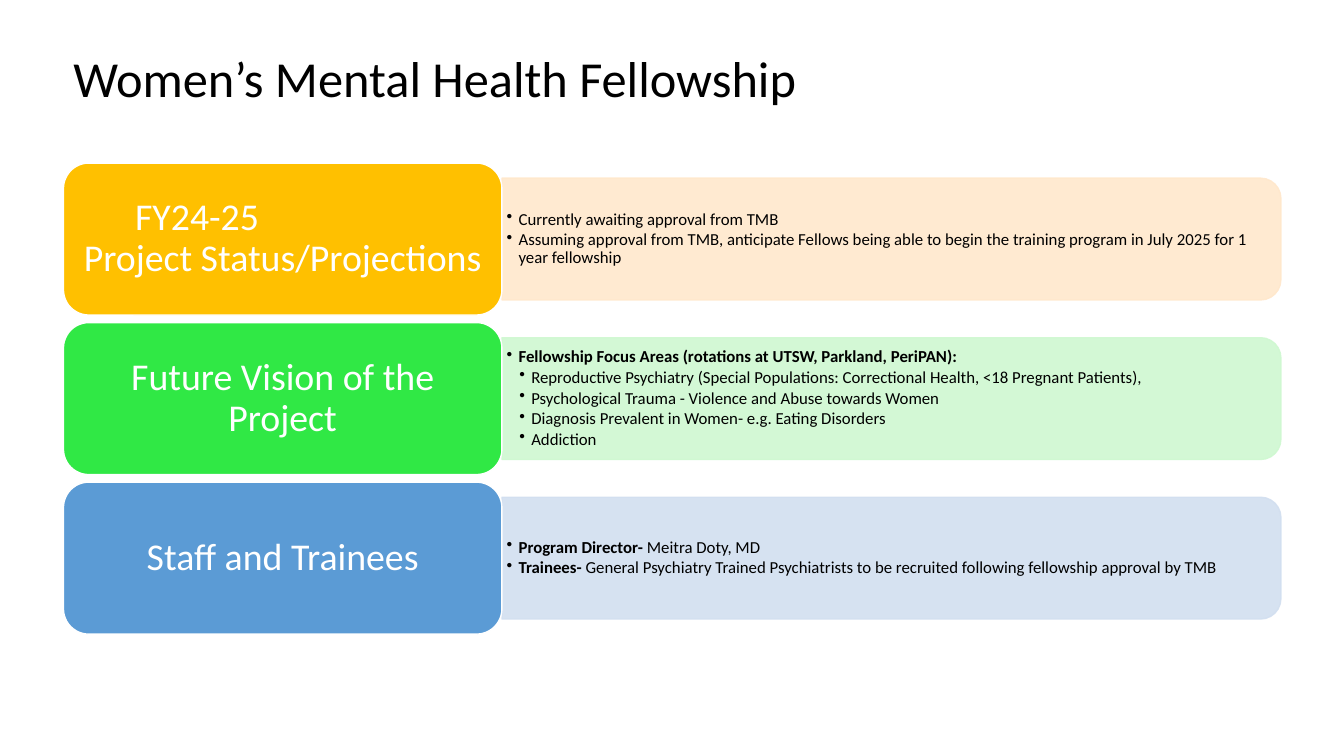
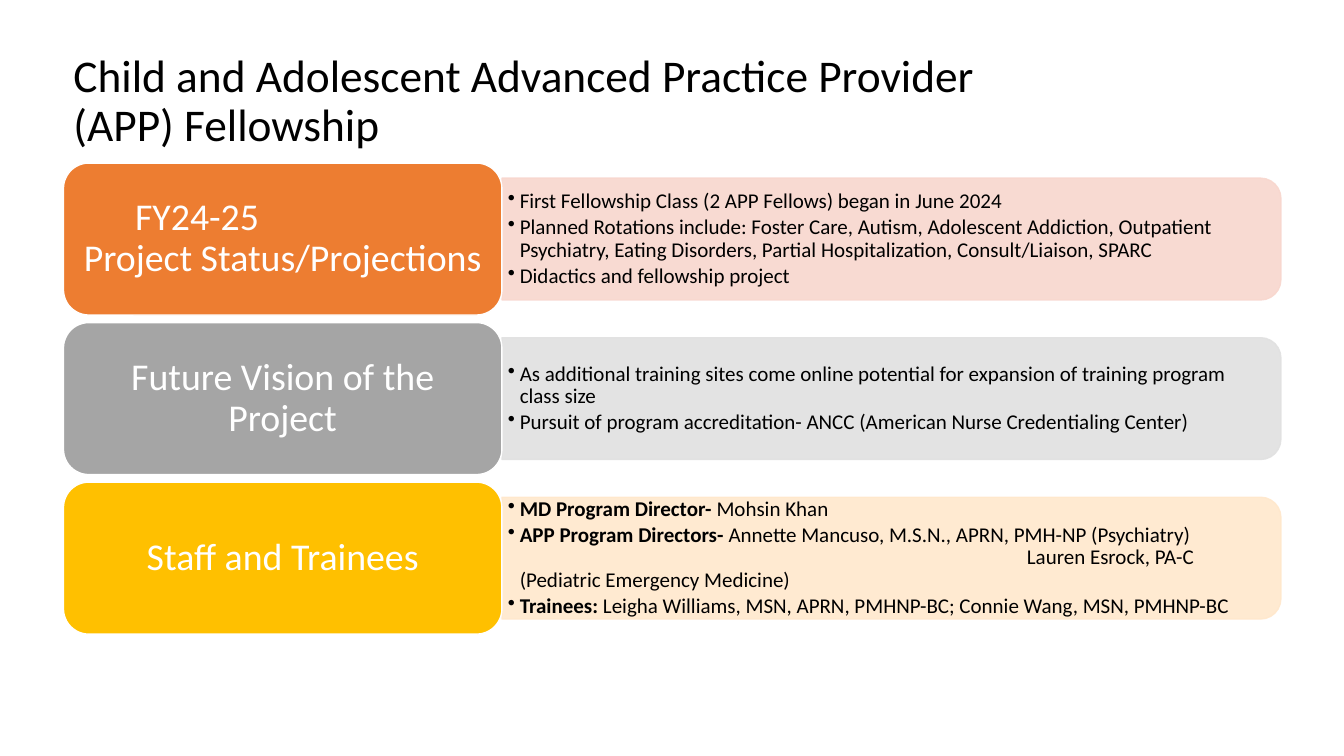
import pptx
import pptx.util
import pptx.dml.color
import pptx.enum.shapes
import pptx.enum.text
import pptx.oxml
import pptx.oxml.ns
from pptx.util import Cm

STATUS = ["FY24-25", "Project Status/Projections"]
VISION = ["Future Vision of the Project"]
STAFF = ["Staff and Trainees"]

# Each bullet: kind, bold part, plain part
SLIDES = [
    {
        "title": ["Women’s Mental Health Fellowship"], "title_size": 36, "size": 12,
        "rows": [
            (STATUS, "FFC000", "FFE8CC", [
                ("main", "", "Currently awaiting approval from TMB"),
                ("main", "", "Assuming approval from TMB, anticipate Fellows being able to begin "
                             "the training program in July 2025 for 1 year fellowship"),
            ]),
            (VISION, "30E845", "CFF8D1", [
                ("main", "Fellowship Focus Areas (rotations at UTSW, Parkland, PeriPAN):", ""),
                ("sub", "", "Reproductive Psychiatry (Special Populations: Correctional Health, "
                            "<18 Pregnant Patients),"),
                ("sub", "", "Psychological Trauma - Violence and Abuse towards Women"),
                ("sub", "", "Diagnosis Prevalent in Women- e.g. Eating Disorders"),
                ("sub", "", "Addiction"),
            ]),
            (STAFF, "5B9BD5", "D2DFF0", [
                ("main", "Program Director- ", "Meitra Doty, MD"),
                ("main", "Trainees-", " General Psychiatry Trained Psychiatrists to be recruited "
                                      "following fellowship approval by TMB"),
            ]),
        ],
    },
    {
        "title": ["Child and Adolescent Advanced Practice Provider", "(APP) Fellowship"],
        "title_size": 32.4, "size": 15,
        "rows": [
            (STATUS, "ED7D31", "F8D7CE", [
                ("main", "", "First Fellowship Class (2 APP Fellows) began in June 2024"),
                ("main", "", "Planned Rotations include: Foster Care, Autism, Adolescent "
                             "Addiction, Outpatient Psychiatry, Eating Disorders, Partial "
                             "Hospitalization, Consult/Liaison, SPARC"),
                ("main", "", "Didactics and fellowship project"),
            ]),
            (VISION, "A5A5A5", "E1E1E1", [
                ("main", "", "As additional training sites come online potential for expansion "
                             "of training program class size"),
                ("main", "", "Pursuit of program accreditation- ANCC (American Nurse "
                             "Credentialing Center)"),
            ]),
            (STAFF, "FFC000", "FFE8CC", [
                ("main", "MD Program Director- ", "Mohsin Khan"),
                ("main", "APP Program Directors- ",
                 "Annette Mancuso, M.S.N., APRN, PMH-NP (Psychiatry)"),
                ("continued", "", "Lauren Esrock, PA-C (Pediatric Emergency Medicine)"),
                ("main", "Trainees: ",
                 "Leigha Williams, MSN, APRN, PMHNP-BC; Connie Wang, MSN, PMHNP-BC"),
            ]),
        ],
    },
]

# Shared layout and style
FONT, BLACK, WHITE = "Calibri", "000000", "FFFFFF"
LEFT, TOP, PITCH = Cm(1.6), Cm(4.11), Cm(4.02)
LABEL_WIDTH, LABEL_HEIGHT = Cm(11.05), Cm(3.83)
PANEL_LEFT, PANEL_WIDTH, PANEL_HEIGHT = LEFT + LABEL_WIDTH, Cm(19.63), Cm(3.07)
TEXT_WIDTH, TEXT_HEIGHT = Cm(19.48), Cm(2.77)
LABEL_SIZE, STATUS_INDENT = 27, Cm(1.37)
# Left margin and first-line indent of each kind of bullet
INDENTS = {"main": (Cm(0.3), Cm(-0.3)), "sub": (Cm(0.62), Cm(-0.3)),
           "continued": (Cm(0.3), Cm(12.78))}
ALIGN = pptx.enum.text.PP_ALIGN
ANCHOR = pptx.enum.text.MSO_ANCHOR
SHAPE = pptx.enum.shapes.MSO_SHAPE


def rgb(color):
    return pptx.dml.color.RGBColor.from_string(color)


def add_text(paragraph, text, size=12, color=BLACK, bold=False):
    run = paragraph.add_run()
    run.text = text
    run.font.name, run.font.size = FONT, pptx.util.Pt(size)
    run.font.bold, run.font.color.rgb = bold, rgb(color)


def set_frame(frame, horizontal, vertical, anchor=ANCHOR.MIDDLE):
    frame.word_wrap = True
    frame.auto_size = pptx.enum.text.MSO_AUTO_SIZE.NONE
    frame.vertical_anchor = anchor
    frame.margin_left = frame.margin_right = horizontal
    frame.margin_top = frame.margin_bottom = vertical


def next_paragraph(frame, index, align=ALIGN.LEFT):
    paragraph = frame.add_paragraph() if index else frame.paragraphs[0]
    paragraph.alignment, paragraph.line_spacing = align, 0.9
    paragraph.space_before = paragraph.space_after = pptx.util.Pt(0)
    return paragraph


def set_indent(paragraph, margin, indent):
    properties = paragraph._p.get_or_add_pPr()
    properties.set("marL", str(margin))
    properties.set("indent", str(indent))
    return properties


def add_block(slide, kind, box, fill, line):
    shape = slide.shapes.add_shape(kind, *box)
    shape.shadow.inherit = False
    shape.fill.solid()
    shape.fill.fore_color.rgb = rgb(fill)
    shape.line.color.rgb, shape.line.width = rgb(line), pptx.util.Pt(1)
    return shape


def add_panel(slide, middle, color):
    # A tall shape turned on its side, so the rounded corners face right
    box = (PANEL_LEFT + (PANEL_WIDTH - PANEL_HEIGHT) // 2, middle - PANEL_WIDTH // 2,
           PANEL_HEIGHT, PANEL_WIDTH)
    panel = add_block(slide, SHAPE.ROUND_2_SAME_RECTANGLE, box, color, color)
    panel.rotation = 90
    for element in panel._element.spPr.iter(pptx.oxml.ns.qn("a:srgbClr")):
        alpha = pptx.oxml.parse_xml(f'<a:alpha {pptx.oxml.ns.nsdecls("a")} val="90000"/>')
        element.append(alpha)


def add_bullets(slide, middle, bullets, size):
    frame = slide.shapes.add_textbox(PANEL_LEFT, middle - TEXT_HEIGHT // 2,
                                     TEXT_WIDTH, TEXT_HEIGHT).text_frame
    set_frame(frame, Cm(size / 100), Cm(0.08))
    for index, (kind, bold_text, plain_text) in enumerate(bullets):
        paragraph = next_paragraph(frame, index)
        paragraph.level = 1 if kind == "sub" else 0
        properties = set_indent(paragraph, *INDENTS[kind])
        mark = "<a:buNone {}/>" if kind == "continued" else '<a:buChar {} char="•"/>'
        properties.append(pptx.oxml.parse_xml(mark.format(pptx.oxml.ns.nsdecls("a"))))
        following = bullets[index + 1][0] if index + 1 < len(bullets) else ""
        if following != "continued":
            paragraph.space_after = pptx.util.Pt(size * 0.15)
        for text, bold in ((bold_text, True), (plain_text, False)):
            if text:
                add_text(paragraph, text, size=size, bold=bold)


def add_label(slide, top, lines, color):
    label = add_block(slide, SHAPE.ROUNDED_RECTANGLE,
                      (LEFT, top, LABEL_WIDTH, LABEL_HEIGHT), color, WHITE)
    set_frame(label.text_frame, Cm(0.25), Cm(0.15))
    for index, line in enumerate(lines):
        indented = len(lines) > 1 and index == 0
        paragraph = next_paragraph(label.text_frame, index,
                                   ALIGN.LEFT if indented else ALIGN.CENTER)
        if indented:
            set_indent(paragraph, STATUS_INDENT, 0)
        add_text(paragraph, line, size=LABEL_SIZE, color=WHITE)


def add_title(slide, lines, size):
    title = slide.shapes.title
    title.left, title.top, title.width, title.height = LEFT, Cm(1.22), Cm(30.68), Cm(2.39)
    set_frame(title.text_frame, Cm(0.25), Cm(0.13), ANCHOR.TOP)
    paragraph = next_paragraph(title.text_frame, 0)
    for index, line in enumerate(lines):
        if index:
            paragraph.add_line_break()
        add_text(paragraph, line, size=size)


def main():
    presentation = pptx.Presentation()
    presentation.slide_width, presentation.slide_height = Cm(33.87), Cm(19.05)
    for content in SLIDES:
        slide = presentation.slides.add_slide(presentation.slide_layouts[5])
        add_title(slide, content["title"], content["title_size"])
        for index, (lines, color, tint, bullets) in enumerate(content["rows"]):
            top = TOP + index * PITCH
            middle = top + LABEL_HEIGHT // 2
            add_panel(slide, middle, tint)
            add_bullets(slide, middle, bullets, content["size"])
            add_label(slide, top, lines, color)
    presentation.save("out.pptx")


if __name__ == "__main__":
    main()
